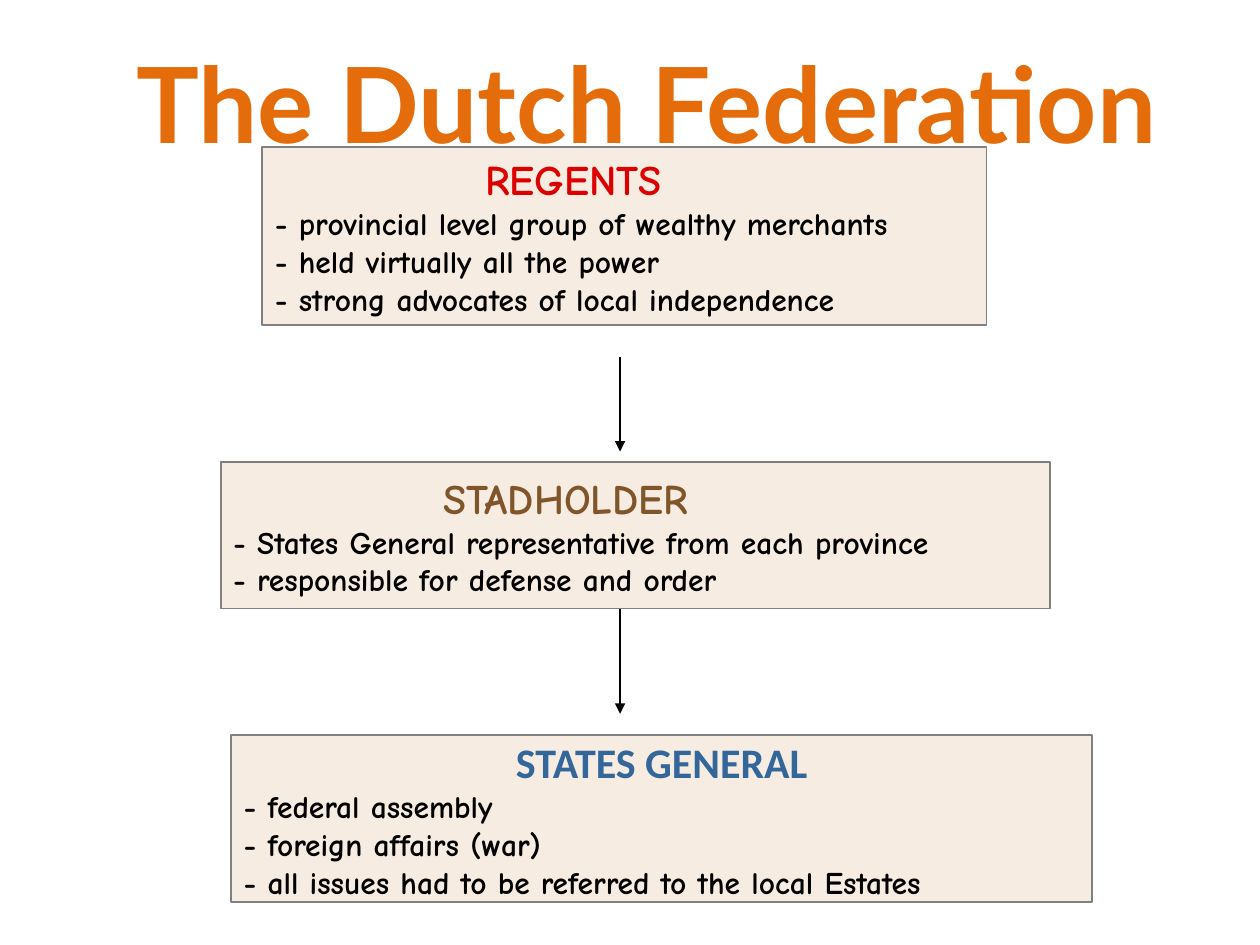
from lxml.etree import SubElement
from pptx import Presentation
from pptx.dml.color import RGBColor
from pptx.enum.shapes import MSO_CONNECTOR, MSO_SHAPE
from pptx.enum.text import MSO_ANCHOR, MSO_AUTO_SIZE, PP_ALIGN
from pptx.oxml.ns import qn
from pptx.util import Cm, Pt

BODY_FONT = "Comic Neue"
ARROW_X = 12.5

# Box (left, top, width, height in cm), heading, colour, font, indent, points
# An indent of None centres the heading.
BODIES = [
    ((5.29, 2.96, 14.6, 3.59), "REGENTS", "DC0000", BODY_FONT, 4.24,
     ["provincial level group of wealthy merchants",
      "held virtually all the power",
      "strong advocates of local independence"]),
    ((4.45, 9.31, 16.72, 2.96), "STADHOLDER", "80552A", BODY_FONT, 4.24,
     ["States General representative from each province",
      "responsible for defense and order"]),
    ((4.66, 14.82, 17.36, 3.36), "STATES GENERAL", "336699", "Calibri", None,
     ["federal assembly",
      "foreign affairs (war)",
      "all issues had to be referred to the local Estates"]),
]
ARROWS = [(7.2, 9.1), (12.28, 14.39)]  # top and bottom of each, in cm


def rgb(value):
    return RGBColor.from_string(value)


def add_run(p, text, size, color, font):
    r = p.add_run()
    r.text = text
    r.font.size = Pt(size)
    r.font.bold = True
    r.font.name = font
    r.font.color.rgb = rgb(color)


def add_title(s, box, text):
    sp = s.shapes.title
    sp.left, sp.top, sp.width, sp.height = map(Cm, box)
    tf = sp.text_frame
    tf.word_wrap = True
    tf.auto_size = MSO_AUTO_SIZE.NONE
    tf.vertical_anchor = MSO_ANCHOR.TOP
    p = tf.paragraphs[0]
    p.alignment = PP_ALIGN.CENTER
    add_run(p, text, 60, "E46C0A", "Lato")


def add_body(s, box, heading, color, font, indent, points):
    sp = s.shapes.add_shape(MSO_SHAPE.RECTANGLE, *map(Cm, box))
    sp.shadow.inherit = False
    sp.fill.solid()
    sp.fill.fore_color.rgb = rgb("F6ECE2")
    sp.line.color.rgb = rgb("808080")
    sp.line.width = Pt(1)
    tf = sp.text_frame
    tf.word_wrap = False
    tf.vertical_anchor = MSO_ANCHOR.MIDDLE

    # Heading
    p = tf.paragraphs[0]
    if indent is None:
        p.alignment = PP_ALIGN.CENTER
    else:
        p.alignment = PP_ALIGN.LEFT
        p._p.get_or_add_pPr().set("marL", str(Cm(indent)))
    add_run(p, heading, 24, color, font)

    # Points
    for point in points:
        p = tf.add_paragraph()
        p.alignment = PP_ALIGN.LEFT
        add_run(p, f"- {point}", 18, "000000", BODY_FONT)


def add_arrow(s, x, top, bottom):
    line = s.shapes.add_connector(
        MSO_CONNECTOR.STRAIGHT, Cm(x), Cm(top), Cm(x), Cm(bottom))
    line.line.color.rgb = rgb("000000")
    line.line.width = Pt(0.75)
    SubElement(line.line._get_or_add_ln(), qn("a:tailEnd"), type="triangle")
    SubElement(line._element.spPr, qn("a:effectLst"))


def main():
    prs = Presentation()
    prs.slide_width, prs.slide_height = Cm(25.4), Cm(19.05)
    s = prs.slides.add_slide(prs.slide_layouts[5])
    add_title(s, (2.33, 0.64, 21.4, 2.82), "The Dutch Federation")
    for body in BODIES:
        add_body(s, *body)
    for top, bottom in ARROWS:
        add_arrow(s, ARROW_X, top, bottom)
    prs.save("out.pptx")


if __name__ == "__main__":
    main()
